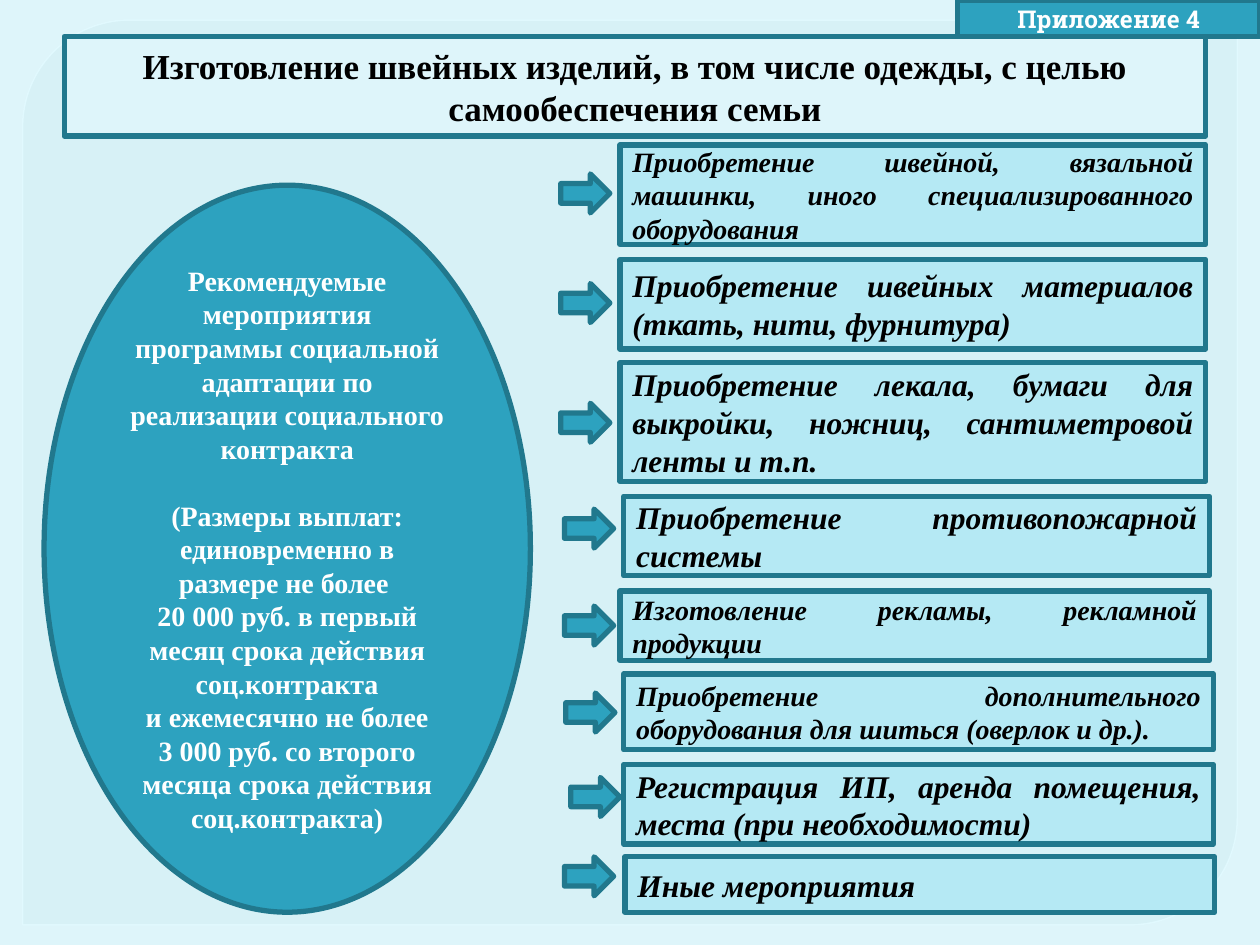
from lxml import etree
from pptx import Presentation
from pptx import util as u
from pptx.dml.color import RGBColor
from pptx.enum import shapes, text
from pptx.oxml.ns import qn

# Lengths are columns and rows of a grid of 100 by 75 square cells.
CELL = u.Inches(0.1)
COLUMNS, ROWS = 100, 75

COLORS = {
    "background": "DEF5FA",
    "panel": "D4EFF5",
    "panel_edge": "E2FAFF",
    "border": "21788D",
    "accent": "2DA2BF",
    "measure": "B5E9F4",
    "dark": "000000",
    "light": "FFFFFF",
}
SERIF, SLAB = "Times New Roman", "Roboto Slab"

TITLE = "Изготовление швейных изделий, в том числе одежды, с целью самообеспечения семьи"
PROGRAM = [
    "Рекомендуемые мероприятия программы социальной адаптации по реализации "
    "социального контракта",
    "(Размеры выплат: единовременно в размере не более \v20 000 руб. в первый "
    "месяц срока действия соц.контракта",
    "и ежемесячно не более",
    "3 000 руб. со второго месяца срока действия соц.контракта)",
]

# Wording, font size, box (left, top, width, height), arrow (left, top)
MEASURES = [
    ("Приобретение швейной, вязальной машинки, иного специализированного оборудования",
     16, (49.2, 11.5, 46.5, 7.9), (44.5, 13.8)),
    ("Приобретение швейных материалов (ткать, нити, фурнитура)",
     18, (49.2, 20.6, 46.5, 7.1), (44.5, 22.5)),
    ("Приобретение лекала, бумаги для выкройки, ножниц, сантиметровой ленты и т.п.",
     18, (49.2, 28.8, 46.5, 9.4), (44.5, 32)),
    ("Приобретение противопожарной системы",
     18, (49.5, 39.4, 46.5, 6.3), (44.8, 40.4)),
    ("Изготовление рекламы, рекламной продукции",
     16, (49.2, 46.9, 46.8, 5.5), (44.8, 48.1)),
    ("Приобретение дополнительного оборудования для шиться (оверлок и др.).",
     16, (49.5, 53.5, 46.8, 6), (44.9, 55)),
    ("Регистрация ИП, аренда помещения, места (при необходимости)",
     18, (49.5, 60.7, 46.8, 6.3), (45.3, 61.7)),
    ("Иные мероприятия",
     18, (49.6, 68, 46.8, 4.4), (44.8, 68)),
]
ARROW_SIZE = (3.9, 3.1)


def color(name):
    return RGBColor.from_string(COLORS[name])


def add_figure(slide, kind, box, fill, edge="border", edge_width=3):
    figure = slide.shapes.add_shape(kind, *(round(side * CELL) for side in box))
    figure.shadow.inherit = False
    figure.fill.solid()
    figure.fill.fore_color.rgb = color(fill)
    figure.line.color.rgb = color(edge)
    figure.line.width = u.Pt(edge_width)
    return figure


def write(figure, paragraphs, size, ink, align=text.PP_ALIGN.CENTER,
          font=SERIF, italic=False):
    frame = figure.text_frame
    frame.word_wrap = True
    frame.vertical_anchor = text.MSO_ANCHOR.MIDDLE
    for index, wording in enumerate(paragraphs):
        paragraph = frame.add_paragraph() if index else frame.paragraphs[0]
        paragraph.text = wording
        paragraph.alignment = align
        paragraph.font.name = font
        paragraph.font.size = u.Pt(size)
        paragraph.font.bold = True
        paragraph.font.italic = italic
        paragraph.font.color.rgb = color(ink)


def set_opacity(parent, percent):
    """Give the first RGB colour below an XML element an opacity."""
    rgb = next(parent.iter(qn("a:srgbClr")))
    etree.SubElement(rgb, qn("a:alpha")).set("val", str(percent * 1000))


def add_panel(slide):
    panel = add_figure(slide, shapes.MSO_SHAPE.ROUND_2_DIAG_RECTANGLE,
                       (1.8, 1.6, 96.4, 71.8), "panel", "panel_edge", 0.87)
    panel.adjustments[0] = 0.118
    panel.adjustments[1] = 0
    properties = panel.element.spPr
    set_opacity(properties.find(qn("a:solidFill")), 65)
    set_opacity(properties.find(qn("a:ln")), 88)


def add_program(slide):
    program = add_figure(slide, shapes.MSO_SHAPE.OVAL, (3.5, 14.7, 38.6, 57.7), "accent")
    write(program, PROGRAM, 16, "light")
    program.text_frame.paragraphs[1].space_before = u.Pt(19)


def add_measure(slide, wording, size, box, arrow_corner):
    measure = add_figure(slide, shapes.MSO_SHAPE.RECTANGLE, box, "measure")
    write(measure, [wording], size, "dark", text.PP_ALIGN.JUSTIFY, italic=True)
    add_figure(slide, shapes.MSO_SHAPE.RIGHT_ARROW, arrow_corner + ARROW_SIZE, "accent")


def main():
    deck = Presentation()
    deck.slide_width, deck.slide_height = COLUMNS * CELL, ROWS * CELL
    slide = deck.slides.add_slide(deck.slide_layouts[6])
    slide.background.fill.solid()
    slide.background.fill.fore_color.rgb = color("background")

    add_panel(slide)
    title = add_figure(slide, shapes.MSO_SHAPE.RECTANGLE, (5.1, 2.9, 90.6, 7.9), "background")
    write(title, [TITLE], 20, "dark")
    add_program(slide)
    for measure in MEASURES:
        add_measure(slide, *measure)
    appendix = add_figure(slide, shapes.MSO_SHAPE.RECTANGLE, (76, 0, 24, 2.9), "accent")
    write(appendix, ["Приложение 4"], 14, "light", font=SLAB)

    deck.save("out.pptx")


if __name__ == "__main__":
    main()
